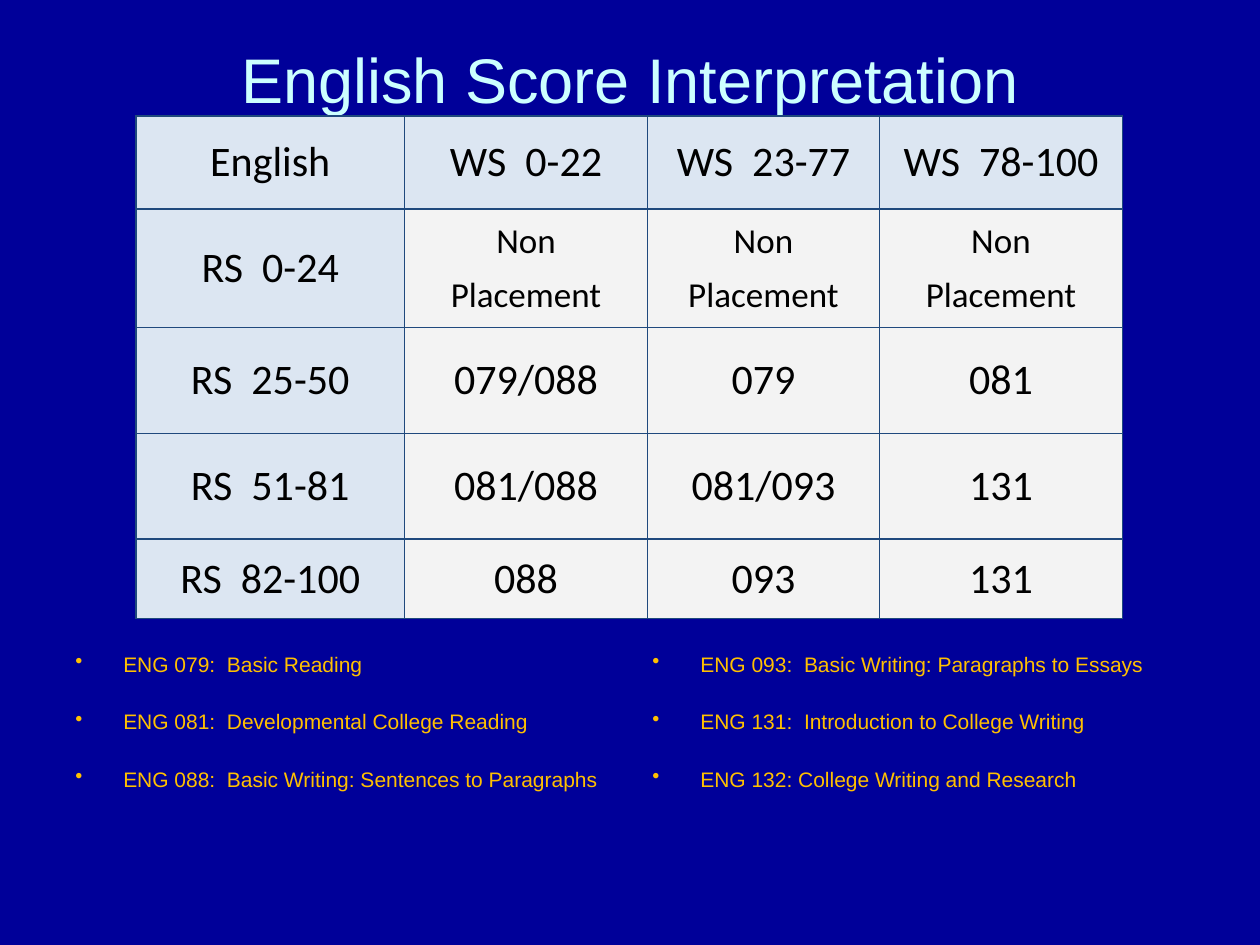
import pptx
import pptx.dml.color
import pptx.enum.text
import pptx.oxml
import pptx.oxml.ns
import pptx.util
from pptx.util import Inches

Pt = pptx.util.Pt
MIDDLE = pptx.enum.text.MSO_ANCHOR.MIDDLE
CENTER = pptx.enum.text.PP_ALIGN.CENTER
NS = pptx.oxml.ns.nsdecls("a")


def tint(code):
    return pptx.dml.color.RGBColor.from_string(code)


def write(para, text, size, face, code, form):
    """Add one run to para and set the paragraph's format values."""
    for name, value in form.items():
        setattr(para, name, value)
    run = para.add_run()
    run.text = text
    for name, value in {"size": Pt(size), "name": face}.items():
        setattr(run.font, name, value)
    run.font.color.rgb = tint(code)


deck = pptx.Presentation()
deck.slide_width, deck.slide_height = Inches(10), Inches(7.5)
slide = deck.slides.add_slide(deck.slide_layouts[6])
slide.background.fill.solid()
slide.background.fill.fore_color.rgb = tint("000099")

# Title
frame = slide.shapes.add_textbox(Inches(0.5), 0, Inches(9), Inches(1.25)).text_frame
frame.word_wrap = True
frame.vertical_anchor = MIDDLE
write(frame.paragraphs[0], "English Score Interpretation", 36, "Arial", "CCFFFF",
      {"alignment": CENTER})

# Course lists
lists = [
    (0.5, ["ENG 079:  Basic Reading",
           "ENG 081:  Developmental College Reading",
           "ENG 088:  Basic Writing: Sentences to Paragraphs"]),
    (5.08, ["ENG 093:  Basic Writing: Paragraphs to Essays",
            "ENG 131:  Introduction to College Writing",
            "ENG 132: College Writing and Research"]),
]
for left, items in lists:
    frame = slide.shapes.add_textbox(
        Inches(left), Inches(4.92), Inches(4.42), Inches(1.78)).text_frame
    frame.word_wrap = True
    for i, item in enumerate(items):
        para = frame.add_paragraph() if i else frame.paragraphs[0]
        props = para._p.get_or_add_pPr()
        props.set("marL", str(Inches(0.38)))
        props.set("indent", str(-Inches(0.38)))
        props.append(pptx.oxml.parse_xml(f'<a:buChar {NS} char="•"/>'))
        write(para, item, 12, "Arial", "FFC000",
              {"line_spacing": 2.0, "space_before": Pt(4 if i else 0)})

# Placement table
rows = [
    ["English", "WS  0-22", "WS  23-77", "WS  78-100"],
    ["RS  0-24"] + ["Non\nPlacement"] * 3,
    ["RS  25-50", "079/088", "079", "081"],
    ["RS  51-81", "081/088", "081/093", "131"],
    ["RS  82-100", "088", "093", "131"],
]
widths = [2.13, 1.93, 1.84, 1.93]
heights = [0.74, 0.94, 0.84, 0.84, 0.63]
table = slide.shapes.add_table(len(rows), len(widths), Inches(1.08), Inches(0.92),
                               Inches(sum(widths)), Inches(sum(heights))).table
for col, width in zip(table.columns, widths):
    col.width = Inches(width)
for row, height in zip(table.rows, heights):
    row.height = Inches(height)

cell_form = {"vertical_anchor": MIDDLE}
for side in ("left", "right", "top", "bottom"):
    cell_form["margin_" + side] = Inches(0.04)

for r, row in enumerate(rows):
    for c, text in enumerate(row):
        cell = table.cell(r, c)
        for name, value in cell_form.items():
            setattr(cell, name, value)
        for edge in ("lnL", "lnR", "lnT", "lnB"):
            cell._tc.get_or_add_tcPr().append(pptx.oxml.parse_xml(
                f'<a:{edge} {NS} w="{Pt(1)}"><a:solidFill>'
                f'<a:srgbClr val="1F497D"/></a:solidFill></a:{edge}>'))
        cell.fill.solid()
        cell.fill.fore_color.rgb = tint("F3F3F3" if r and c else "DCE6F2")
        lines = text.split("\n")
        for i, line in enumerate(lines):
            frame = cell.text_frame
            para = frame.add_paragraph() if i else frame.paragraphs[0]
            write(para, line, 20 if len(lines) > 1 else 24, "Calibri", "000000",
                  {"alignment": CENTER, "space_after": Pt(6)})

deck.save("out.pptx")
